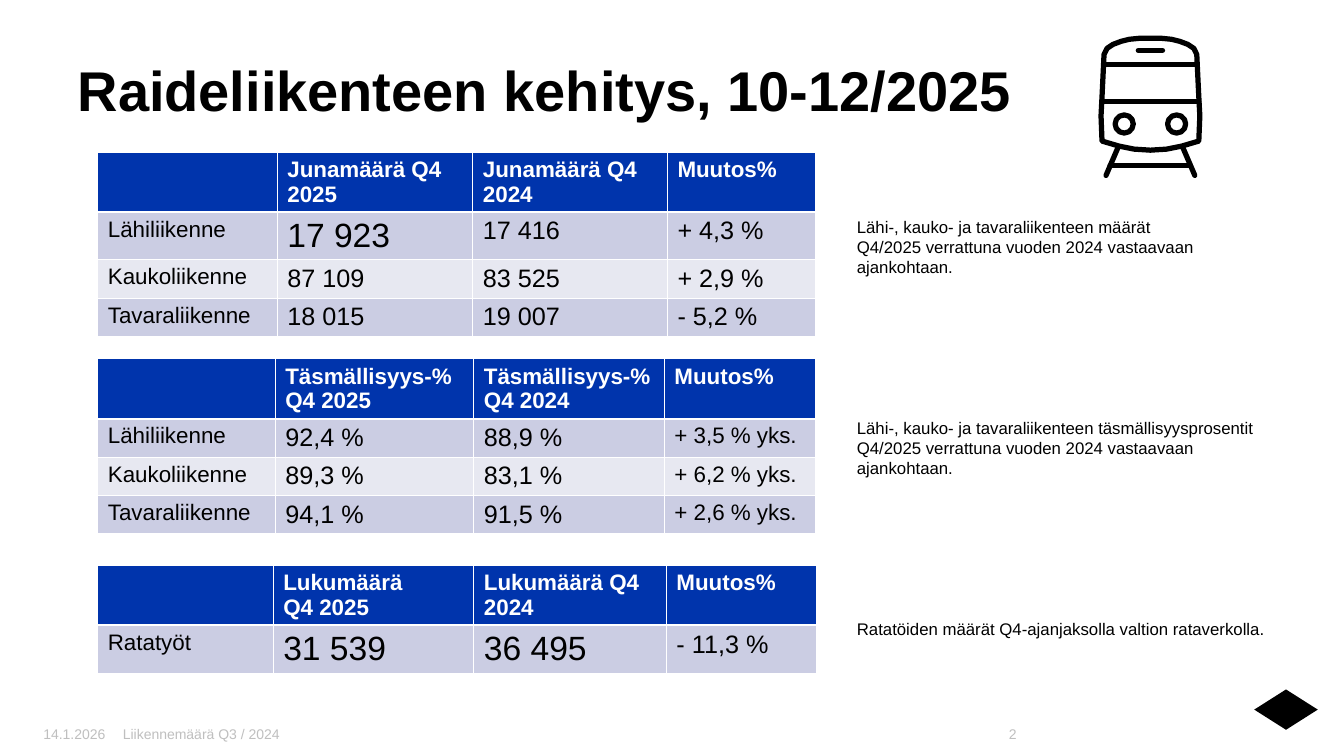
from dataclasses import dataclass

from lxml import etree
from pptx import Presentation
from pptx.dml.color import RGBColor
from pptx.enum import shapes, text
from pptx.oxml import ns
from pptx.util import Inches, Pt

FONT = "Arial"
BLACK, WHITE, GREY = "000000", "FFFFFF", "BFBFBF"
BLUE, BAND_DARK, BAND_LIGHT = "0034AC", "CBCDE3", "E7E8F1"
STROKE = 3.75
TRAIN_CENTRE = 11.41


@dataclass
class Figures:
    top: float
    columns: list[float]
    heights: list[float]
    header: list[str]
    rows: list[list[str]]
    sizes: list[list[int]]


@dataclass
class FooterItem:
    left: float
    width: float
    insets: tuple[float, float]
    content: str
    align: text.PP_ALIGN


FIGURES = [
    Figures(1.51, [1.78, 1.94, 1.93, 1.47], [0.58, 0.47, 0.38, 0.38],
            ["", "Junamäärä Q4 2025", "Junamäärä Q4 2024", "Muutos%"],
            [["Lähiliikenne", "17 923", "17 416", "+ 4,3 %"],
             ["Kaukoliikenne", "87 109", "83 525", "+ 2,9 %"],
             ["Tavaraliikenne", "18 015", "19 007", "- 5,2 %"]],
            [[16, 24, 18, 18], [16, 18, 18, 18], [16, 18, 18, 18]]),
    Figures(3.56, [1.76, 1.97, 1.89, 1.5], [0.58, 0.38, 0.38, 0.38],
            ["", "Täsmällisyys-% Q4 2025", "Täsmällisyys-% Q4 2024", "Muutos%"],
            [["Lähiliikenne", "92,4 %", "88,9 %", "+ 3,5 % yks."],
             ["Kaukoliikenne", "89,3 %", "83,1 %", "+ 6,2 % yks."],
             ["Tavaraliikenne", "94,1 %", "91,5 %", "+ 2,6 % yks."]],
            [[16, 18, 18, 16]] * 3),
    Figures(5.61, [1.74, 1.99, 1.91, 1.49], [0.59, 0.47],
            ["", "Lukumäärä\nQ4 2025", "Lukumäärä Q4 2024", "Muutos%"],
            [["Ratatyöt", "31 539", "36 495", "- 11,3 %"]],
            [[16, 24, 24, 18]]),
]

# Each note paragraph with the space before it, in points
NOTES = [
    ("Lähi-, kauko- ja tavaraliikenteen määrät", 0),
    ("Q4/2025 verrattuna vuoden 2024 vastaavaan ajankohtaan.", 0),
    ("Lähi-, kauko- ja tavaraliikenteen täsmällisyysprosentit Q4/2025 "
     "verrattuna vuoden 2024 vastaavaan ajankohtaan.", 100.5),
    ("Ratatöiden määrät Q4-ajanjaksolla valtion rataverkolla.", 100.5),
]

FOOTER = [
    FooterItem(0.43, 0.9, (0, 0.1), "14.1.2026", text.PP_ALIGN.LEFT),
    FooterItem(1.12, 7.98, (0.1, 0), "Liikennemäärä Q3 / 2024", text.PP_ALIGN.LEFT),
    FooterItem(9.14, 1.04, (0, 0.1), "2", text.PP_ALIGN.RIGHT),
]

# Left half of the train body, from roof to floor
BODY_HALF = [(11.41, 0.38), (11.3, 0.38), (11.2, 0.39), (11.12, 0.41), (11.04, 0.44),
             (10.98, 0.48), (10.95, 0.54), (10.93, 0.96), (10.92, 1.15), (10.93, 1.4),
             (11.1, 1.45), (11.25, 1.48), (11.41, 1.49)]
# Window edges, sign and sleeper: left, right, height
CROSSBARS = [(10.93, 11.89, 1.01), (11.01, 11.8, 1.64), (10.95, 11.87, 0.64), (11.29, 11.53, 0.5)]


def colour(hex_code: str) -> RGBColor:
    return RGBColor.from_string(hex_code)


def mirrored(x: float) -> float:
    return 2 * TRAIN_CENTRE - x


def add_run(paragraph, content: str, size: float, hex_code: str, bold: bool = False) -> None:
    run = paragraph.add_run()
    run.text = content
    run.font.name = FONT
    run.font.size = Pt(size)
    run.font.bold = bold
    run.font.color.rgb = colour(hex_code)


def set_borders(cell, top: float, bottom: float) -> None:
    """White cell edges; the schema wants them ahead of the fill."""
    properties = cell._tc.get_or_add_tcPr()
    for index, (edge, width) in enumerate(
            [("lnL", 0.6), ("lnR", 0.6), ("lnT", top), ("lnB", bottom)]):
        line = etree.Element(ns.qn(f"a:{edge}"), w=str(Pt(width)))
        fill = etree.SubElement(line, ns.qn("a:solidFill"))
        etree.SubElement(fill, ns.qn("a:srgbClr"), val=WHITE)
        properties.insert(index, line)


def add_figures(slide, figures: Figures) -> None:
    rows = [figures.header, *figures.rows]
    table = slide.shapes.add_table(
        len(rows), len(figures.columns), Inches(0.97), Inches(figures.top),
        Inches(sum(figures.columns)), Inches(sum(figures.heights))).table
    for column, width in zip(table.columns, figures.columns):
        column.width = Inches(width)
    for r, (row, sizes) in enumerate(zip(rows, [[16] * 4, *figures.sizes])):
        table.rows[r].height = Inches(figures.heights[r])
        is_header = r == 0
        band = BLUE if is_header else (BAND_DARK if r % 2 else BAND_LIGHT)
        for c, (content, size) in enumerate(zip(row, sizes)):
            cell = table.cell(r, c)
            cell.fill.solid()
            cell.fill.fore_color.rgb = colour(band)
            set_borders(cell, 1.53 if r == 1 else 0.6, 1.53 if is_header else 0.6)
            if not content:
                continue
            for i, part in enumerate(content.split("\n")):
                paragraph = cell.text_frame.add_paragraph() if i else cell.text_frame.paragraphs[0]
                add_run(paragraph, part, size, WHITE if is_header else BLACK, is_header)


def add_notes(slide) -> None:
    frame = slide.shapes.add_textbox(Inches(8.4), Inches(2.1), Inches(4.45), Inches(4.34)).text_frame
    frame.word_wrap = True
    for i, (content, gap) in enumerate(NOTES):
        paragraph = frame.add_paragraph() if i else frame.paragraphs[0]
        paragraph.line_spacing = 1.0
        paragraph.space_before = Pt(gap)
        add_run(paragraph, content, 12, BLACK)


def add_footer_item(slide, item: FooterItem) -> None:
    frame = slide.shapes.add_textbox(
        Inches(item.left), Inches(7.15), Inches(item.width), Inches(0.26)).text_frame
    frame.word_wrap = True
    frame.vertical_anchor = text.MSO_ANCHOR.MIDDLE
    frame.margin_left, frame.margin_right = map(Inches, item.insets)
    frame.paragraphs[0].alignment = item.align
    add_run(frame.paragraphs[0], item.content, 10, GREY)


def outline(shape) -> None:
    shape.shadow.inherit = False
    shape.fill.background()
    shape.line.color.rgb = colour(BLACK)
    shape.line.width = Pt(STROKE)


def add_bar(slide, x1: float, y1: float, x2: float, y2: float) -> None:
    bar = slide.shapes.add_connector(
        shapes.MSO_CONNECTOR.STRAIGHT, Inches(x1), Inches(y1), Inches(x2), Inches(y2))
    bar.line.color.rgb = colour(BLACK)
    bar.line.width = Pt(STROKE)
    bar.line._get_or_add_ln().set("cap", "rnd")
    etree.SubElement(bar._element.spPr, ns.qn("a:effectLst"))


def add_train(slide) -> None:
    profile = BODY_HALF + [(mirrored(x), y) for x, y in BODY_HALF[-2:0:-1]]
    # The builder keeps whole units only, so the points go in as EMU
    points = [(Inches(x), Inches(y)) for x, y in profile]
    builder = slide.shapes.build_freeform(*points[0])
    builder.add_line_segments(points[1:], close=True)
    outline(builder.convert_to_shape())
    for left, right, y in CROSSBARS:
        add_bar(slide, left, y, right, y)
    for lamp_x in (11.15, mirrored(11.15)):
        outline(slide.shapes.add_shape(
            shapes.MSO_SHAPE.OVAL, Inches(lamp_x - 0.09), Inches(1.14), Inches(0.18), Inches(0.18)))
    add_bar(slide, 11.09, 1.46, 10.97, 1.74)
    add_bar(slide, mirrored(11.09), 1.46, mirrored(10.97), 1.74)


def add_emblem(slide) -> None:
    emblem = slide.shapes.add_shape(
        shapes.MSO_SHAPE.DIAMOND, Inches(12.44), Inches(6.84), Inches(0.63), Inches(0.4))
    emblem.shadow.inherit = False
    emblem.fill.solid()
    emblem.fill.fore_color.rgb = colour(BLACK)
    emblem.line.fill.background()


def add_title(slide) -> None:
    title = slide.shapes.title
    title.left, title.top, title.width, title.height = map(Inches, (0.77, 0.55, 11.5, 1.22))
    frame = title.text_frame
    frame.margin_left = frame.margin_top = 0
    frame.vertical_anchor = text.MSO_ANCHOR.TOP
    frame.paragraphs[0].alignment = text.PP_ALIGN.LEFT
    frame.paragraphs[0].line_spacing = 1.0
    add_run(frame.paragraphs[0], "Raideliikenteen kehitys, 10-12/2025", 40, BLACK, bold=True)


def main() -> None:
    deck = Presentation()
    deck.slide_width, deck.slide_height = Inches(13.33), Inches(7.5)
    slide = deck.slides.add_slide(deck.slide_layouts[5])
    add_emblem(slide)
    add_title(slide)
    for figures in FIGURES:
        add_figures(slide, figures)
    for item in FOOTER:
        add_footer_item(slide, item)
    add_notes(slide)
    add_train(slide)
    deck.save("out.pptx")


if __name__ == "__main__":
    main()
